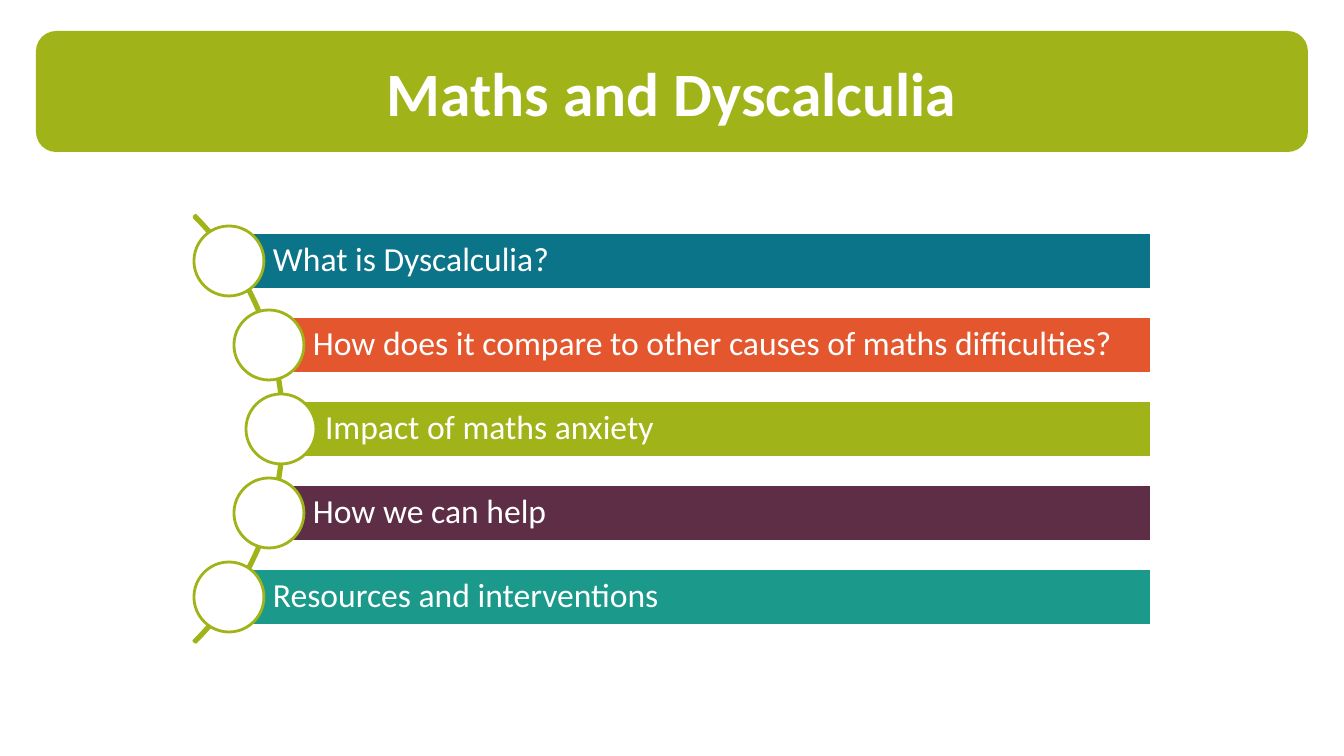
"""Build the Maths and Dyscalculia agenda slide."""
import math

from pptx import Presentation
from pptx import util as u
from pptx.dml.color import RGBColor
from pptx.enum import shapes, text

COLOURS = {
    "white": "FFFFFF", "lime": "A0B419", "blue": "0C7489",
    "orange": "E4572E", "plum": "5D2E46", "teal": "1B998B",
}
TOPICS = [
    ("What is Dyscalculia?", "blue"),
    ("How does it compare to other causes of maths difficulties?", "orange"),
    ("Impact of maths anxiety", "lime"),
    ("How we can help", "plum"),
    ("Resources and interventions", "teal"),
]
MIDDLE_Y, PITCH = 429, 84
CURVE_X, CURVE_RADIUS = -15, 296
BAR_RIGHT, BAR_HEIGHT, CIRCLE = 1151, 56, 70


def px(n):
    """Turn pixels into EMU."""
    return u.Inches(n / 100.8)


def rgb(name):
    """Return a named colour."""
    return RGBColor.from_string(COLOURS[name])


def add_shape(s, kind, box, fill=None, line=None):
    """Add a flat preset shape with an optional fill and 2 pt line."""
    sp = s.shapes.add_shape(kind, *map(px, box))
    sp.shadow.inherit = False
    if fill:
        sp.fill.solid()
        sp.fill.fore_color.rgb = rgb(fill)
    else:
        sp.fill.background()
    if line:
        sp.line.color.rgb = rgb(line)
        sp.line.width = u.Pt(2)
    else:
        sp.line.fill.background()
    return sp


def set_text(sp, words, frame, para, font):
    """Write one white paragraph in a shape using format values."""
    tf = sp.text_frame
    p = tf.paragraphs[0]
    r = p.add_run()
    r.text = words
    r.font.color.rgb = rgb("white")
    base_frame = {"word_wrap": True, "vertical_anchor": text.MSO_ANCHOR.MIDDLE}
    base_font = {"name": "Calibri"}
    formats = ((tf, base_frame | frame), (p, para), (r.font, base_font | font))
    for target, values in formats:
        for key, value in values.items():
            setattr(target, key, value)


def add_title(s, words):
    """Add the rounded title banner."""
    sp = add_shape(s, shapes.MSO_SHAPE.ROUNDED_RECTANGLE, (36, 31, 1272, 121), "lime")
    set_text(sp, words, {}, {"alignment": text.PP_ALIGN.CENTER},
             {"size": u.Pt(44), "bold": True})


def add_arc(s):
    """Add the thin curve behind the circles."""
    sp = add_shape(s, shapes.MSO_SHAPE.BLOCK_ARC,
                   (-320, MIDDLE_Y - 302, 604, 604), line="lime")
    for i, value in enumerate((189, 27, 0.004)):
        sp.adjustments[i] = value


def add_topic(s, offset, words, colour):
    """Add a topic bar and its circle at a vertical offset along the curve."""
    x = round(CURVE_X + math.sqrt(CURVE_RADIUS ** 2 - offset ** 2))
    y = MIDDLE_Y + offset
    bar = add_shape(s, shapes.MSO_SHAPE.RECTANGLE,
                    (x, y - BAR_HEIGHT // 2, BAR_RIGHT - x, BAR_HEIGHT),
                    colour, "white")
    frame = {"margin_left": px(44), "margin_right": px(7),
             "margin_top": px(7), "margin_bottom": px(7)}
    para = {"alignment": text.PP_ALIGN.LEFT, "line_spacing": 0.9}
    set_text(bar, words, frame, para, {"size": u.Pt(24)})
    add_shape(s, shapes.MSO_SHAPE.OVAL,
              (x - CIRCLE // 2, y - CIRCLE // 2, CIRCLE, CIRCLE), "white", "lime")


def main():
    """Build and save the slide."""
    prs = Presentation()
    prs.slide_width, prs.slide_height = px(1344), px(756)
    s = prs.slides.add_slide(prs.slide_layouts[6])
    add_title(s, "Maths and Dyscalculia")
    add_arc(s)
    for i, (words, colour) in enumerate(TOPICS):
        add_topic(s, (i - len(TOPICS) // 2) * PITCH, words, colour)
    prs.save("out.pptx")


if __name__ == "__main__":
    main()
